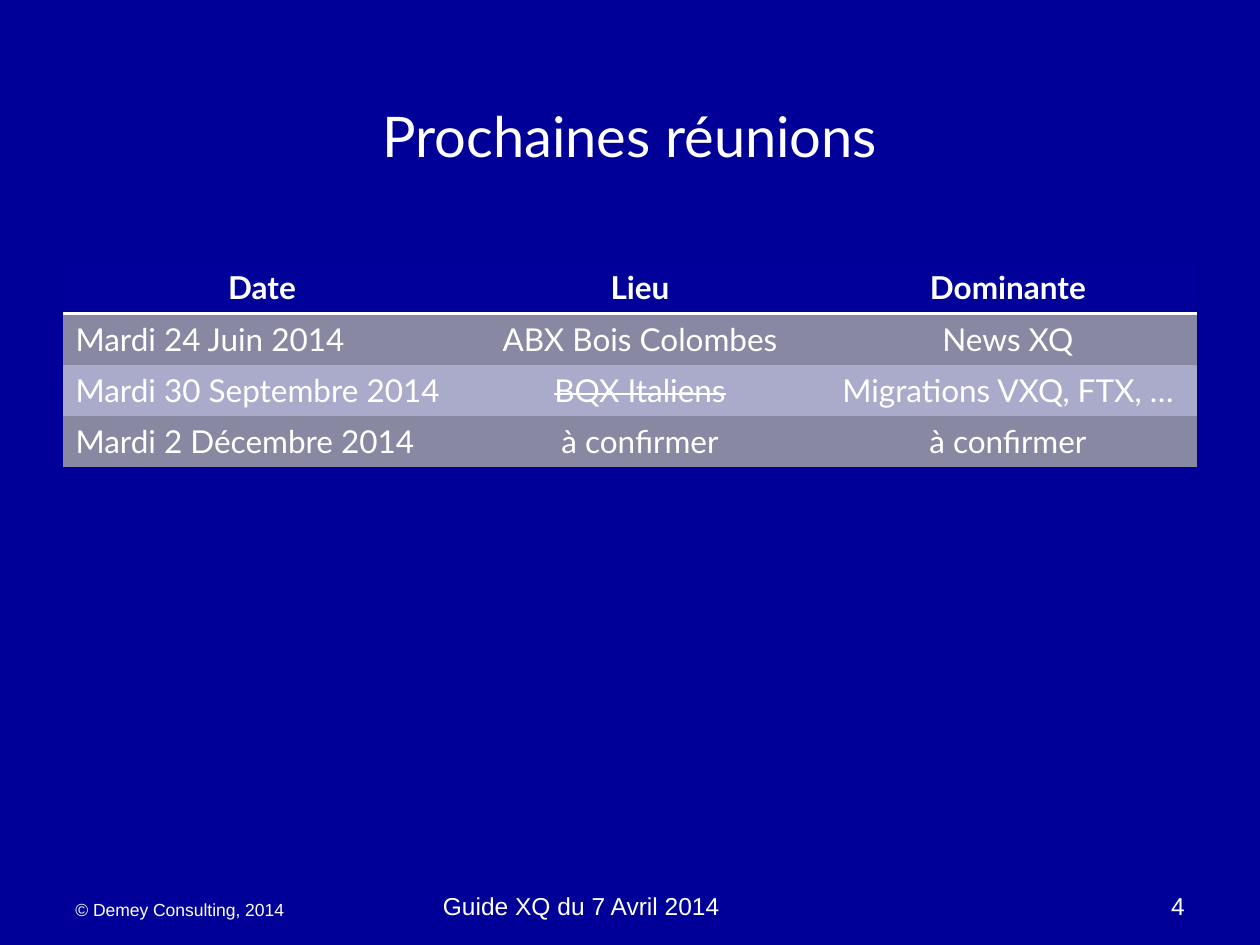
from lxml import etree
from pptx import Presentation
from pptx import util as u
from pptx.dml.color import RGBColor
from pptx.enum import text
from pptx.oxml import ns

Pt = u.Pt
LEFT, CENTER, RIGHT = text.PP_ALIGN.LEFT, text.PP_ALIGN.CENTER, text.PP_ALIGN.RIGHT
MIDDLE, BOTTOM = text.MSO_ANCHOR.MIDDLE, text.MSO_ANCHOR.BOTTOM
NO_STYLE = "{2D5ABB26-0587-4C30-8999-92F81FD0307C}"


def rgb(value):
    return RGBColor.from_string(value)


class Deck:
    background, white, header = "000099", "FFFFFF", "010199"
    bands = ("8888A2", "AAAACA")
    body_font, footer_font = "Lato", "Arial"

    def __init__(self, prs):
        self.s = prs.slides.add_slide(prs.slide_layouts[6])
        fill = self.s.background.fill
        fill.solid()
        fill.fore_color.rgb = rgb(self.background)

    def set_text(self, tf, words, align, strike=False, **font):
        p = tf.paragraphs[0]
        p.alignment = align
        r = p.add_run()
        r.text = words
        for name, value in font.items():
            setattr(r.font, name, value)
        r.font.color.rgb = rgb(self.white)
        if strike:
            r._r.get_or_add_rPr().set("strike", "sngStrike")

    def text_box(self, box, words, anchor, align, **font):
        tf = self.s.shapes.add_textbox(*map(Pt, box)).text_frame
        tf.word_wrap = True
        tf.vertical_anchor = anchor
        self.set_text(tf, words, align, **font)

    def underline_cell(self, cell):
        """Draw the cell's bottom border; it must precede the cell's fill."""
        line = etree.Element(ns.qn("a:lnB"), w=str(Pt(2)))
        fill = etree.SubElement(line, ns.qn("a:solidFill"))
        etree.SubElement(fill, ns.qn("a:srgbClr"), val=self.white)
        cell._tc.get_or_add_tcPr().insert(0, line)

    def table(self, left, top, widths, row_height, rows, struck):
        size = (sum(widths), row_height * len(rows))
        frame = self.s.shapes.add_table(
            len(rows), len(widths), *map(Pt, (left, top, *size)))
        table = frame.table
        table._tbl.tblPr.find(ns.qn("a:tableStyleId")).text = NO_STYLE
        for column, width in zip(table.columns, widths):
            column.width = Pt(width)
        for i, row in enumerate(rows):
            table.rows[i].height = Pt(row_height)
            for j, words in enumerate(row):
                cell = table.cell(i, j)
                cell.fill.solid()
                cell.fill.fore_color.rgb = rgb(
                    self.bands[(i - 1) % 2] if i else self.header)
                if i == 0:
                    self.underline_cell(cell)
                self.set_text(cell.text_frame, words,
                              LEFT if i and j == 0 else CENTER,
                              strike=words in struck, name=self.body_font,
                              size=Pt(18), bold=i == 0)


def main():
    prs = Presentation()
    prs.slide_width, prs.slide_height = Pt(720), Pt(540)
    deck = Deck(prs)
    deck.text_box((36, 23, 648, 109), "Prochaines réunions", MIDDLE, CENTER,
                  name=deck.body_font, size=Pt(32))
    meetings = [
        ("Date", "Lieu", "Dominante"),
        ("Mardi 24 Juin 2014", "ABX Bois Colombes", "News XQ"),
        ("Mardi 30 Septembre 2014", "BQX Italiens", "Migrations VXQ, FTX, …"),
        ("Mardi 2 Décembre 2014", "à confirmer", "à confirmer"),
    ]
    deck.table(36, 150, (227.5, 204.5, 216), 29.2, meetings, {"BQX Italiens"})
    footers = [
        (36, 168, "© Demey Consulting, 2014", LEFT, 10),
        (246, 228, "Guide XQ du 7 Avril 2014", LEFT, 14),
        (516, 168, "4", RIGHT, 14),
    ]
    for left, width, words, align, size in footers:
        deck.text_box((left, 492, width, 37.5), words, BOTTOM, align,
                      name=deck.footer_font, size=Pt(size))
    prs.save("out.pptx")


if __name__ == "__main__":
    main()
